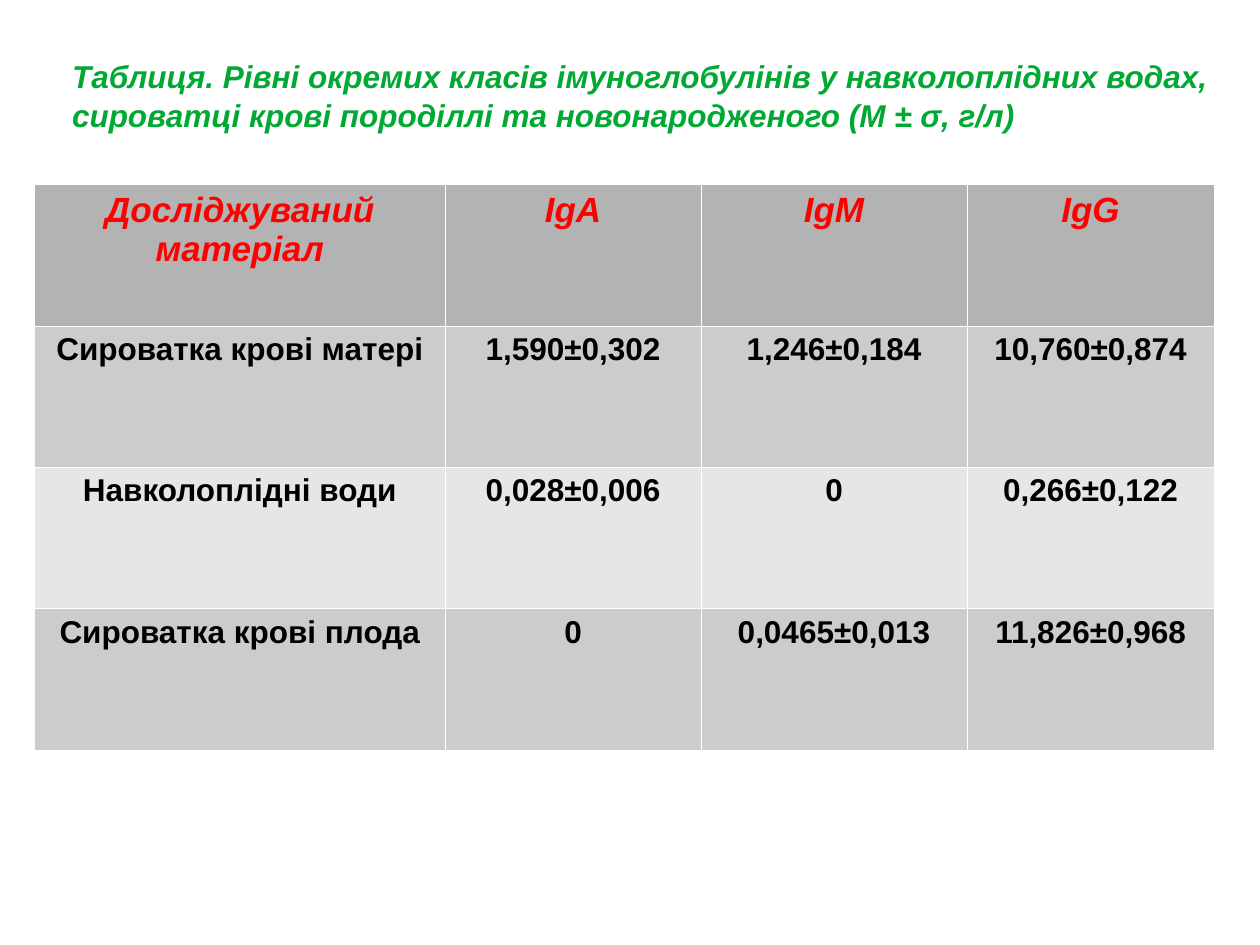
from dataclasses import dataclass

from lxml import etree
from pptx import Presentation
from pptx.dml.color import RGBColor
from pptx.enum.text import MSO_ANCHOR, MSO_AUTO_SIZE, PP_ALIGN
from pptx.oxml.ns import qn
from pptx.util import Pt

TOP = MSO_ANCHOR.TOP
FIXED = MSO_AUTO_SIZE.NONE
CENTER = PP_ALIGN.CENTER
JUSTIFY = PP_ALIGN.JUSTIFY


@dataclass(frozen=True)
class Theme:
    font: str = "Arial"
    green: str = "00A933"
    red: str = "FF0000"
    black: str = "000000"
    white: str = "FFFFFF"
    head: str = "B3B3B3"
    dark: str = "CCCCCC"
    light: str = "E6E6E6"
    large: int = 20
    body: int = 18


theme = Theme()


def write(frame, text, size, color, align, italic=False, spacing=1.0):
    frame.text = text
    frame.word_wrap = True
    for para in frame.paragraphs:
        para.alignment = align
        para.line_spacing = spacing
        for run in para.runs:
            font = run.font
            font.name = theme.font
            font.size = Pt(size)
            font.bold = True
            font.italic = italic
            font.color.rgb = RGBColor.from_string(color)


def border(cell, color, width):
    props = cell._tc.get_or_add_tcPr()
    for index, side in enumerate(("a:lnL", "a:lnR", "a:lnT", "a:lnB")):
        line = etree.Element(qn(side), w=str(Pt(width)))
        fill = etree.SubElement(line, qn("a:solidFill"))
        etree.SubElement(fill, qn("a:srgbClr"), val=color)
        props.insert(index, line)


deck = Presentation()
deck.slide_width, deck.slide_height = Pt(720), Pt(540)
slide = deck.slides.add_slide(deck.slide_layouts[5])

title = slide.shapes.title
title.left, title.top = Pt(34), Pt(28)
title.width, title.height = Pt(670), Pt(50.4)
frame = title.text_frame
frame.vertical_anchor = TOP
frame.auto_size = FIXED
heading = (
    "Таблиця. Рівні окремих класів імуноглобулінів у навколоплідних водах, \n"
    "сироватці крові породіллі та новонародженого (М ± σ, г/л)"
)
write(frame, heading, theme.body, theme.green, JUSTIFY, italic=True, spacing=1.04)

rows = [
    ("Досліджуваний матеріал", "IgА", "IgМ", "IgG"),
    ("Сироватка крові матері", "1,590±0,302", "1,246±0,184", "10,760±0,874"),
    ("Навколоплідні води", "0,028±0,006", "0", "0,266±0,122"),
    ("Сироватка крові плода", "0", "0,0465±0,013", "11,826±0,968"),
]
widths = (234.7, 146.2, 152, 141.3)
height = 80.8
table = slide.shapes.add_table(
    len(rows), len(widths), Pt(19.7), Pt(105.3), Pt(sum(widths)), Pt(height * len(rows))
).table
for column, width in zip(table.columns, widths):
    column.width = Pt(width)

fills = (theme.head, theme.dark, theme.light, theme.dark)
for r, (row, shade) in enumerate(zip(rows, fills)):
    table.rows[r].height = Pt(height)
    first = r == 0
    size = theme.large if first else theme.body
    color = theme.red if first else theme.black
    for c, text in enumerate(row):
        cell = table.cell(r, c)
        cell.fill.solid()
        cell.fill.fore_color.rgb = RGBColor.from_string(shade)
        cell.vertical_anchor = TOP
        write(cell.text_frame, text, size, color, CENTER, italic=first)
        border(cell, theme.white, 0.06)

deck.save("out.pptx")
